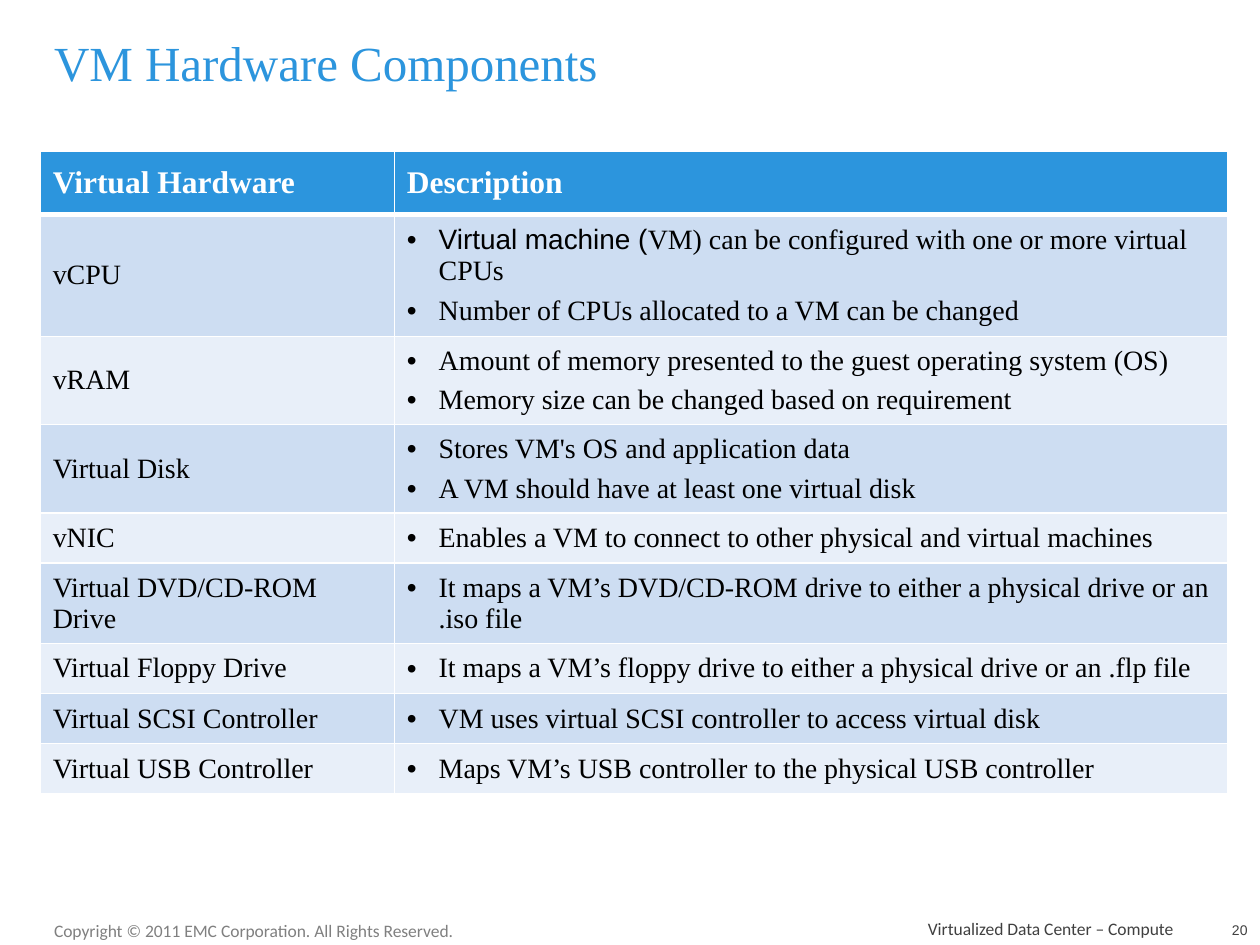
from dataclasses import dataclass

import lxml.etree
import pptx
import pptx.dml.color
import pptx.enum.text
import pptx.oxml.ns
import pptx.util
from pptx.dml.color import RGBColor
from pptx.util import Cm

BLUE = RGBColor(0x2C, 0x95, 0xDD)
BAND_DARK = RGBColor(0xCD, 0xDD, 0xF2)
BAND_LIGHT = RGBColor(0xE8, 0xEF, 0xF9)
WHITE = RGBColor(0xFF, 0xFF, 0xFF)
BLACK = RGBColor(0x00, 0x00, 0x00)
GRAY = RGBColor(0x80, 0x80, 0x80)
DARK_GRAY = RGBColor(0x40, 0x40, 0x40)

SERIF = "Times New Roman"
ALIGN = pptx.enum.text.PP_ALIGN
ANCHOR = pptx.enum.text.MSO_ANCHOR


@dataclass(frozen=True)
class Style:
    size: float
    color: RGBColor
    font: str = SERIF
    bold: bool = False


@dataclass(frozen=True)
class Label:
    text: str
    left: float
    top: float
    width: float
    height: float
    style: Style
    anchor: ANCHOR = ANCHOR.BOTTOM
    align: ALIGN = ALIGN.LEFT


@dataclass(frozen=True)
class Component:
    name: str
    height: float
    points: tuple[str, ...]
    sans_lead: str = ""


HEADER = Style(18, WHITE, bold=True)
BODY = Style(16, BLACK)
BODY_SANS = Style(16, BLACK, "Arial")

LABELS = [
    Label("VM Hardware Components", 0.84, 0.2, 23.5, 2.11, Style(28, BLUE), ANCHOR.MIDDLE),
    Label("Copyright © 2011 EMC Corporation. All Rights Reserved.",
          0.84, 18.42, 8.69, 0.69, Style(10, GRAY, "Calibri"), ANCHOR.TOP),
    Label("Virtualized Data Center – Compute",
          12.27, 18.42, 11.63, 0.63, Style(10, DARK_GRAY, "Calibri"), align=ALIGN.RIGHT),
    Label("20", 24.13, 18.42, 1.27, 0.63, Style(8, DARK_GRAY, "Arial"), align=ALIGN.RIGHT),
]

HEADINGS = ("Virtual Hardware", "Description")
HEADER_HEIGHT = 1.27
COLUMN_WIDTHS = (7.14, 16.79)
COMPONENTS = [
    Component("vCPU", 2.46, (
        "VM) can be configured with one or more virtual CPUs",
        "Number of CPUs allocated to a VM can be changed"), "Virtual machine ("),
    Component("vRAM", 1.78, (
        "Amount of memory presented to the guest operating system (OS)",
        "Memory size can be changed based on requirement")),
    Component("Virtual Disk", 1.78, (
        "Stores VM's OS and application data",
        "A VM should have at least one virtual disk")),
    Component("vNIC", 1.01, (
        "Enables a VM to connect to other physical and virtual machines",)),
    Component("Virtual DVD/CD-ROM Drive", 1.62, (
        "It maps a VM’s DVD/CD-ROM drive to either a physical drive or an .iso file",)),
    Component("Virtual Floppy Drive", 1.01, (
        "It maps a VM’s floppy drive to either a physical drive or an .flp file",)),
    Component("Virtual SCSI Controller", 1.01, (
        "VM uses virtual SCSI controller to access virtual disk",)),
    Component("Virtual USB Controller", 1.01, (
        "Maps VM’s USB controller to the physical USB controller",)),
]


def add_span(para, text: str, style: Style) -> None:
    span = para.add_run()
    span.text = text
    span.font.size = pptx.util.Pt(style.size)
    span.font.name = style.font
    span.font.bold = style.bold
    span.font.color.rgb = style.color


def add_label(slide, label: Label) -> None:
    box = slide.shapes.add_textbox(
        Cm(label.left), Cm(label.top), Cm(label.width), Cm(label.height))
    frame = box.text_frame
    frame.word_wrap = True
    frame.vertical_anchor = label.anchor
    para = frame.paragraphs[0]
    para.alignment = label.align
    add_span(para, label.text, label.style)


def add_bullet(para) -> None:
    properties = para._p.get_or_add_pPr()
    properties.set("marL", str(Cm(0.64)))
    properties.set("indent", str(-Cm(0.64)))
    qn = pptx.oxml.ns.qn
    lxml.etree.SubElement(properties, qn("a:buFont"), typeface="Arial")
    lxml.etree.SubElement(properties, qn("a:buChar"), char="•")


def format_cell(cell, fill: RGBColor, top: float = 1, bottom: float = 1) -> None:
    """Fill the cell and give it white borders, widths in points."""
    cell.vertical_anchor = ANCHOR.MIDDLE
    cell.fill.solid()
    cell.fill.fore_color.rgb = fill
    properties = cell._tc.get_or_add_tcPr()
    qn = pptx.oxml.ns.qn
    sides = {"lnL": 1, "lnR": 1, "lnT": top, "lnB": bottom}
    for position, (side, width) in enumerate(sides.items()):
        line = lxml.etree.Element(qn(f"a:{side}"), w=str(pptx.util.Pt(width)))
        solid = lxml.etree.SubElement(line, qn("a:solidFill"))
        lxml.etree.SubElement(solid, qn("a:srgbClr"), val=str(WHITE))
        properties.insert(position, line)


def fill_description(cell, component: Component) -> None:
    frame = cell.text_frame
    for number, point in enumerate(component.points):
        para = frame.add_paragraph() if number else frame.paragraphs[0]
        add_bullet(para)
        if number:
            para.space_before = pptx.util.Pt(5)
        elif component.sans_lead:
            add_span(para, component.sans_lead, BODY_SANS)
        add_span(para, point, BODY)


def add_component_table(slide) -> None:
    heights = [HEADER_HEIGHT] + [component.height for component in COMPONENTS]
    table = slide.shapes.add_table(
        len(heights), len(COLUMN_WIDTHS), Cm(0.81), Cm(3.05),
        Cm(sum(COLUMN_WIDTHS)), Cm(sum(heights))).table
    for column, width in zip(table.columns, COLUMN_WIDTHS):
        column.width = Cm(width)
    for row, height in zip(table.rows, heights):
        row.height = Cm(height)

    for cell, heading in zip(table.rows[0].cells, HEADINGS):
        format_cell(cell, BLUE, bottom=3)
        add_span(cell.text_frame.paragraphs[0], heading, HEADER)

    for number, component in enumerate(COMPONENTS, start=1):
        name_cell, description_cell = table.rows[number].cells
        for cell in (name_cell, description_cell):
            format_cell(cell, BAND_DARK if number % 2 else BAND_LIGHT,
                        top=3 if number == 1 else 1)
        add_span(name_cell.text_frame.paragraphs[0], component.name, BODY)
        fill_description(description_cell, component)


def main() -> None:
    deck = pptx.Presentation()
    deck.slide_width, deck.slide_height = Cm(25.4), Cm(19.05)
    slide = deck.slides.add_slide(deck.slide_layouts[6])
    add_component_table(slide)
    for label in LABELS:
        add_label(slide, label)
    deck.save("out.pptx")


if __name__ == "__main__":
    main()
